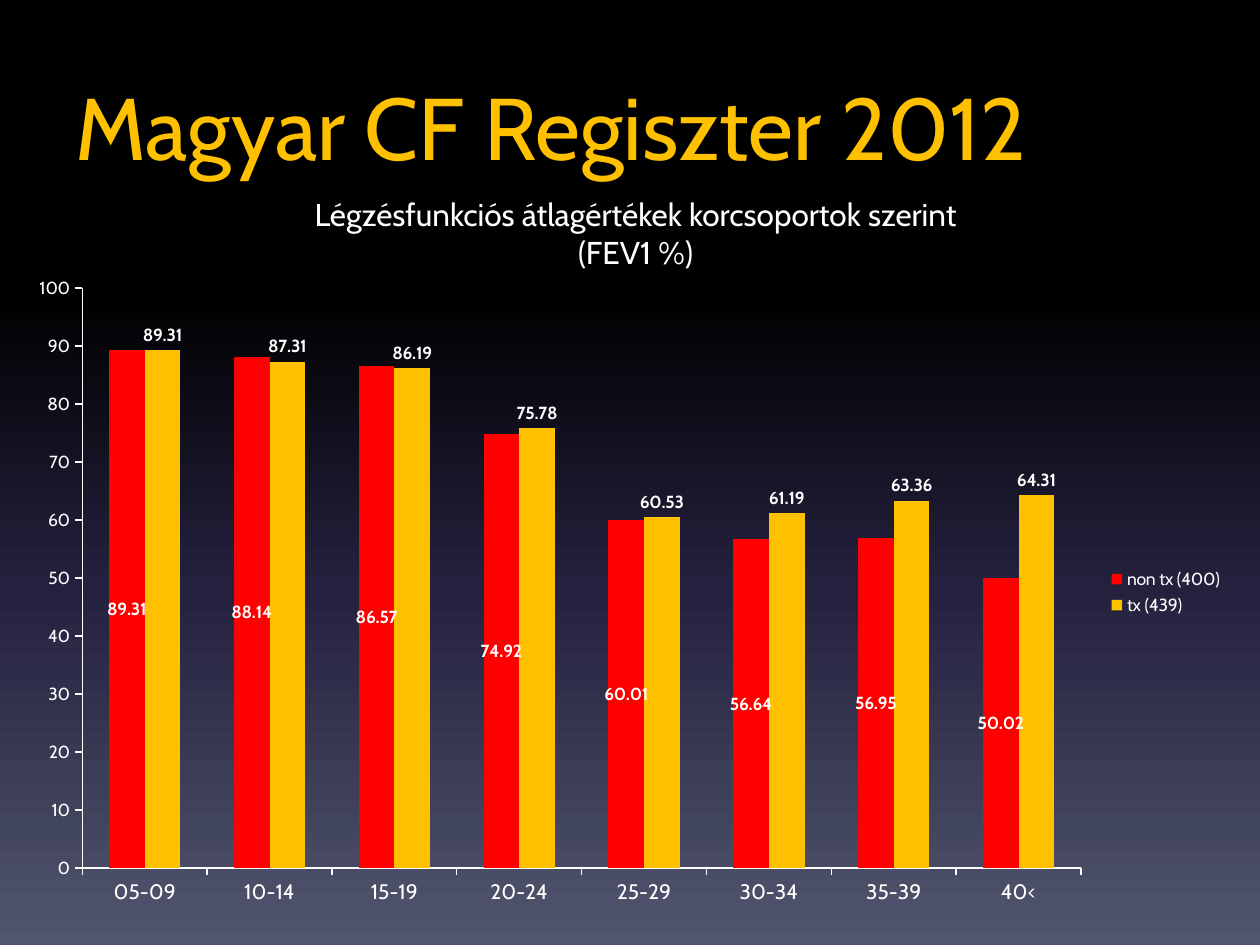
import copy
from dataclasses import dataclass

import pptx
import pptx.chart.data
import pptx.dml.color
import pptx.enum.chart
import pptx.enum.text
import pptx.oxml
import pptx.oxml.ns
import pptx.util

Inches = pptx.util.Inches
Pt = pptx.util.Pt
XL = pptx.enum.chart


def rgb(value):
    return pptx.dml.color.RGBColor.from_string(value)


@dataclass(frozen=True)
class Theme:
    font: str = "Cabin"
    text: str = "FFFFFF"
    accent: str = "FFC000"
    contrast: str = "FF0000"
    title_size: int = 50
    subtitle_size: int = 18
    category_size: int = 12
    chart_size: int = 10
    background: tuple = ((0, "000000"), (0.31, "000000"), (0.62, "24213E"), (1, "51566D"))


class SlideBuilder:
    def __init__(self, s, theme):
        self.s = s
        self.theme = theme

    def background(self):
        fill = self.s.background.fill
        fill.gradient()
        fill.gradient_angle = 270
        stops = self.s.element.find(".//" + pptx.oxml.ns.qn("a:gsLst"))
        while len(stops) < len(self.theme.background):
            stops.append(copy.deepcopy(stops[0]))
        for stop, (position, color) in zip(fill.gradient_stops, self.theme.background):
            stop.position = position
            stop.color.rgb = rgb(color)

    def style_font(self, font, size, color):
        font.name = self.theme.font
        font.size = Pt(size)
        font.color.rgb = rgb(color)

    def text(self, text, box, size, color, align, inset_top=0.05):
        sp = self.s.shapes.add_textbox(*map(Inches, box))
        tf = sp.text_frame
        tf.word_wrap = True
        tf.margin_top = Inches(inset_top)
        p = tf.paragraphs[0]
        p.text = text
        p.alignment = align
        self.style_font(p.font, size, color)

    def column_chart(self, box, categories, series):
        """Draw clustered columns; series holds (name, values, color, label position)."""
        data = pptx.chart.data.CategoryChartData()
        data.categories = categories
        for name, values, _, _ in series:
            data.add_series(name, values)
        chart = self.s.shapes.add_chart(
            XL.XL_CHART_TYPE.COLUMN_CLUSTERED, *map(Inches, box), data).chart
        self.style_font(chart.font, self.theme.chart_size, self.theme.text)
        chart.has_title = False
        chart.has_legend = True
        chart.legend.position = XL.XL_LEGEND_POSITION.RIGHT
        chart.legend.include_in_layout = False

        plot = chart.plots[0]
        plot.gap_width = 150
        plot.overlap = 0
        plot.vary_by_categories = False
        for ser, (_, _, color, position) in zip(plot.series, series):
            ser.format.fill.solid()
            ser.format.fill.fore_color.rgb = rgb(color)
            ser.invert_if_negative = False
            labels = ser.data_labels
            labels.show_value = True
            labels.position = position
            self.style_font(labels.font, self.theme.chart_size, self.theme.text)
            labels.font.bold = True

        self.axis(chart.category_axis, self.theme.category_size)
        self.axis(chart.value_axis, self.theme.chart_size)
        chart.value_axis.minimum_scale = 0
        chart.value_axis.maximum_scale = 100
        chart.value_axis.major_unit = 10
        self.plot_area(chart, x=0.055, y=0.036, w=0.818, h=0.885)

    def axis(self, axis, size):
        axis.has_major_gridlines = False
        axis.major_tick_mark = XL.XL_TICK_MARK.OUTSIDE
        axis.minor_tick_mark = XL.XL_TICK_MARK.NONE
        axis.format.line.color.rgb = rgb(self.theme.text)
        axis.format.line.width = Pt(0.75)
        self.style_font(axis.tick_labels.font, size, self.theme.text)

    def plot_area(self, chart, **fractions):
        """Fix the inner plot area as fractions of the chart."""
        area = chart.element.find(".//" + pptx.oxml.ns.qn("c:plotArea"))
        for old in area.findall(pptx.oxml.ns.qn("c:layout")):
            area.remove(old)
        modes = '<c:xMode val="edge"/><c:yMode val="edge"/>'
        sizes = "".join(f'<c:{key} val="{value}"/>' for key, value in fractions.items())
        area.insert(0, pptx.oxml.parse_xml(
            f'<c:layout {pptx.oxml.ns.nsdecls("c")}><c:manualLayout>'
            f'<c:layoutTarget val="inner"/>{modes}{sizes}</c:manualLayout></c:layout>'))


def main():
    prs = pptx.Presentation()
    prs.slide_width, prs.slide_height = Inches(10), Inches(7.5)
    theme = Theme()
    slide = SlideBuilder(prs.slides.add_slide(prs.slide_layouts[6]), theme)
    align = pptx.enum.text.PP_ALIGN
    label = XL.XL_LABEL_POSITION

    slide.background()
    slide.text("Magyar CF Regiszter 2012", (0.5, 0.5, 9, 1.25),
               theme.title_size, theme.accent, align.LEFT, inset_top=0.08)
    slide.text("Légzésfunkciós átlagértékek korcsoportok szerint (FEV1 %)",
               (2.26, 1.5, 5.57, 0.71), theme.subtitle_size, theme.text, align.CENTER)
    slide.column_chart(
        (0.12, 2.1, 9.69, 5.2),
        ["05-09", "10-14", "15-19", "20-24", "25-29", "30-34", "35-39", "40<"],
        [("non tx (400)", (89.31, 88.14, 86.57, 74.92, 60.01, 56.64, 56.95, 50.02),
          theme.contrast, label.CENTER),
         ("tx (439)", (89.31, 87.31, 86.19, 75.78, 60.53, 61.19, 63.36, 64.31),
          theme.accent, label.OUTSIDE_END)])
    prs.save("out.pptx")


if __name__ == "__main__":
    main()
